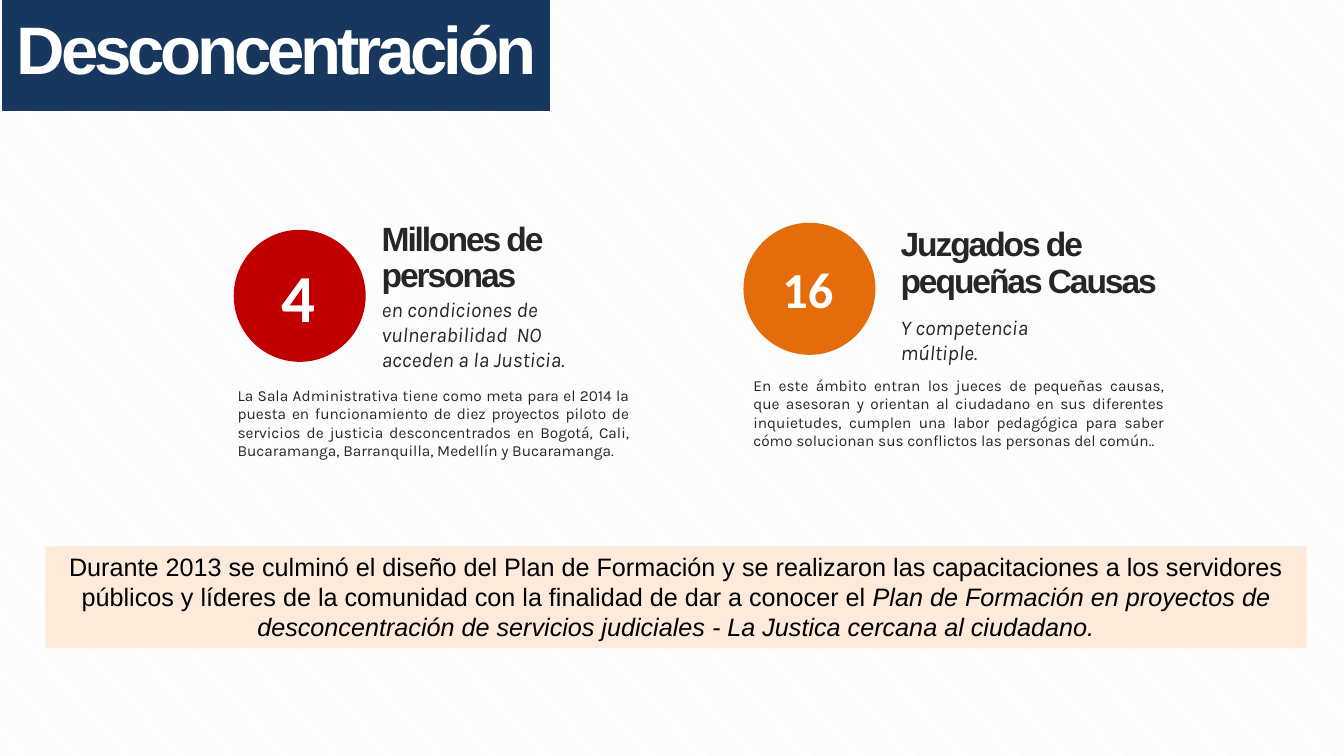
from dataclasses import dataclass

from pptx import Presentation
from pptx.dml.color import RGBColor
from pptx.enum.dml import MSO_PATTERN
from pptx.enum.shapes import MSO_SHAPE
from pptx.enum.text import MSO_ANCHOR, MSO_AUTO_SIZE, PP_ALIGN
from pptx.util import Inches, Pt

SLIDE_WIDTH = Inches(13.34)
SLIDE_HEIGHT = Inches(7.5)


@dataclass(frozen=True)
class Theme:
    navy: str = "17375E"
    red: str = "C00000"
    orange: str = "E46C0A"
    peach: str = "FDEADA"
    white: str = "FFFFFF"
    stripe: str = "F2F2F2"
    ink: str = "262626"
    black: str = "000000"
    heading_font: str = "Arial"
    number_font: str = "Calibri"
    body_font: str = "Karla"
    title_size: int = 48
    heading_size: int = 24
    banner_size: int = 18
    subtitle_size: int = 15
    body_size: int = 11


THEME = Theme()


def color(value):
    return RGBColor.from_string(value)


def place(left, top, width, height):
    return (
        int(SLIDE_WIDTH * left / 100),
        int(SLIDE_HEIGHT * top / 100),
        int(SLIDE_WIDTH * width / 100),
        int(SLIDE_HEIGHT * height / 100),
    )


def write_text(shape, text, *, size, font, ink, bold=False, italic=False,
               italic_ending="", align=PP_ALIGN.LEFT, anchor=MSO_ANCHOR.TOP,
               insets=(0.1, 0.05, 0.1, 0.05), grow=False, spacing=0,
               line_spacing=1.0, space_before=0):
    frame = shape.text_frame
    frame.word_wrap = True
    frame.vertical_anchor = anchor
    frame.auto_size = MSO_AUTO_SIZE.SHAPE_TO_FIT_TEXT if grow else MSO_AUTO_SIZE.NONE
    (frame.margin_left, frame.margin_top,
     frame.margin_right, frame.margin_bottom) = map(Inches, insets)
    paragraph = frame.paragraphs[0]
    paragraph.alignment = align
    paragraph.line_spacing = line_spacing
    paragraph.space_before = Pt(space_before)
    for content, slanted in ((text, italic), (italic_ending, True)):
        if not content:
            continue
        run = paragraph.add_run()
        run.text = content
        run.font.name = font
        run.font.size = Pt(size)
        run.font.bold = bold
        run.font.italic = slanted
        run.font.color.rgb = color(ink)
        if spacing:
            run.font._element.set("spc", str(int(spacing * 100)))


def add_filled_shape(slide, kind, box, fill, outlined=False):
    shape = slide.shapes.add_shape(kind, *place(*box))
    shape.shadow.inherit = False
    shape.fill.solid()
    shape.fill.fore_color.rgb = color(fill)
    if outlined:
        shape.line.color.rgb = color(fill)
        shape.line.width = Pt(0.75)
    else:
        shape.line.fill.background()
    return shape


def add_text(slide, box, text, **text_format):
    write_text(slide.shapes.add_textbox(*place(*box)), text, grow=True, **text_format)


def add_background(slide):
    fill = slide.background.fill
    fill.patterned()
    fill.pattern = MSO_PATTERN.LIGHT_DOWNWARD_DIAGONAL
    fill.fore_color.rgb = color(THEME.stripe)
    fill.back_color.rgb = color(THEME.white)


def add_title(slide, text):
    title = add_filled_shape(slide, MSO_SHAPE.RECTANGLE, (0.22, 0, 40.7, 14.67),
                             THEME.navy, outlined=True)
    write_text(title, text, size=THEME.title_size, font=THEME.heading_font,
               ink=THEME.white, bold=True, spacing=-3, align=PP_ALIGN.CENTER,
               insets=(0.13, 0.07, 0.13, 0.07), space_before=5)


def add_number(slide, left, top, number, size, fill):
    circle = add_filled_shape(slide, MSO_SHAPE.OVAL, (left, top, 9.82, 17.47), fill)
    write_text(circle, number, size=size, font=THEME.number_font, ink=THEME.white,
               bold=True, align=PP_ALIGN.CENTER, anchor=MSO_ANCHOR.MIDDLE,
               insets=(0.17, 0.08, 0.2, 0.08))


def add_heading(slide, box, text):
    add_text(slide, box, text, size=THEME.heading_size, font=THEME.heading_font,
             ink=THEME.ink, bold=True, spacing=-1.5, line_spacing=0.9)


def add_subtitle(slide, box, text):
    add_text(slide, box, text, size=THEME.subtitle_size, font=THEME.body_font,
             ink=THEME.ink, italic=True)


def add_body(slide, box, text):
    add_text(slide, box, text, size=THEME.body_size, font=THEME.body_font,
             ink=THEME.ink, align=PP_ALIGN.JUSTIFY)


def add_banner(slide, text, italic_ending):
    banner = add_filled_shape(slide, MSO_SHAPE.RECTANGLE,
                              (3.37, 72.27, 93.85, 13.47), THEME.peach)
    write_text(banner, text, italic_ending=italic_ending, size=THEME.banner_size,
               font=THEME.heading_font, ink=THEME.black, align=PP_ALIGN.CENTER,
               grow=True)


def main():
    presentation = Presentation()
    presentation.slide_width = SLIDE_WIDTH
    presentation.slide_height = SLIDE_HEIGHT
    slide = presentation.slides.add_slide(presentation.slide_layouts[6])
    add_background(slide)
    add_title(slide, "Desconcentración")

    add_number(slide, 17.39, 30.4, "4", 48, THEME.red)
    add_body(slide, (16.94, 50.4, 30.66, 11.2),
             "La Sala Administrativa tiene como meta para el 2014 la puesta en "
             "funcionamiento de diez proyectos piloto de servicios de justicia "
             "desconcentrados en Bogotá, Cali, Bucaramanga, Barranquilla, Medellín "
             "y Bucaramanga.")
    add_heading(slide, (27.66, 28.8, 21.44, 11.07), "Millones de personas")
    add_subtitle(slide, (27.66, 38.53, 17.02, 11.47),
                 "en condiciones de vulnerabilidad  NO acceden a la Justicia.")

    add_number(slide, 55.32, 29.47, "16", 36, THEME.orange)
    add_body(slide, (55.32, 49.07, 32.08, 11.2),
             "En este ámbito entran los jueces de pequeñas causas, que asesoran y "
             "orientan al ciudadano en sus diferentes inquietudes, cumplen una labor "
             "pedagógica para saber cómo solucionan sus conflictos las personas del "
             "común..")
    add_heading(slide, (66.27, 29.47, 21.14, 11.07), "Juzgados de pequeñas Causas")
    add_subtitle(slide, (66.27, 40.93, 16.87, 8.13), "Y competencia múltiple.")

    add_banner(slide,
               "Durante 2013 se culminó el diseño del Plan de Formación y se "
               "realizaron las capacitaciones a los servidores públicos y líderes de "
               "la comunidad con la finalidad de dar a conocer el ",
               "Plan de Formación en proyectos de desconcentración de servicios "
               "judiciales - La Justica cercana al ciudadano.")
    presentation.save("out.pptx")


if __name__ == "__main__":
    main()
